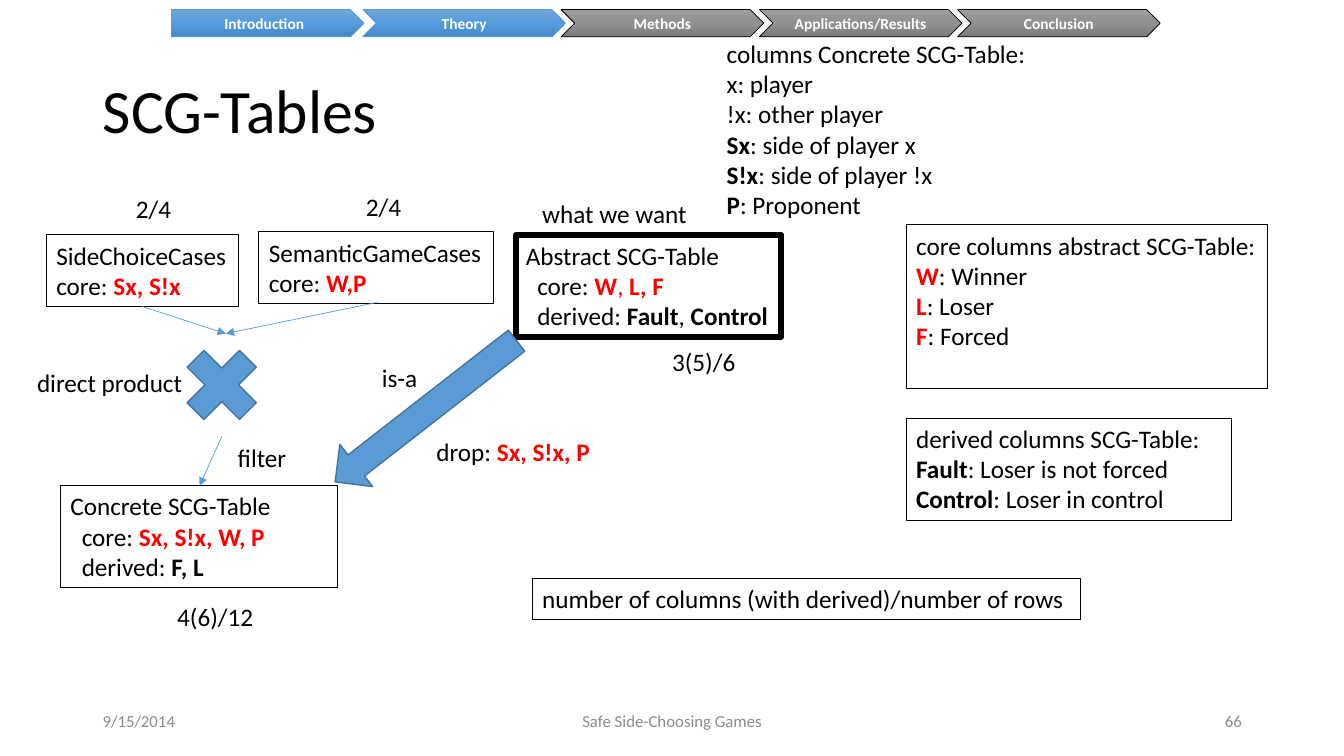
from copy import deepcopy
from dataclasses import dataclass

from lxml import etree
from pptx import Presentation
from pptx.dml.color import RGBColor
from pptx.enum.shapes import MSO_CONNECTOR, MSO_SHAPE
from pptx.enum.text import MSO_ANCHOR, MSO_AUTO_SIZE, PP_ALIGN
from pptx.oxml.ns import qn
from pptx.util import Pt

CHEVRON, PENTAGON = MSO_SHAPE.CHEVRON, MSO_SHAPE.PENTAGON
MULTIPLY, DOWN_ARROW = MSO_SHAPE.MATH_MULTIPLY, MSO_SHAPE.DOWN_ARROW
STRAIGHT = MSO_CONNECTOR.STRAIGHT
LEFT, CENTER, RIGHT = PP_ALIGN.LEFT, PP_ALIGN.CENTER, PP_ALIGN.RIGHT
MIDDLE = MSO_ANCHOR.MIDDLE
FIT_SHAPE = MSO_AUTO_SIZE.SHAPE_TO_FIT_TEXT

BLACK = RGBColor(0, 0, 0)
WHITE = RGBColor(0xFF, 0xFF, 0xFF)
RED = RGBColor(0xFF, 0, 0)
BLUE = RGBColor(0x5B, 0x9B, 0xD5)
DARK_BLUE = RGBColor(0x43, 0x73, 0x9E)
FOOTER_GRAY = RGBColor(0x8C, 0x8C, 0x8C)
BLUE_GRADIENT = (RGBColor(0x71, 0xA6, 0xDB), RGBColor(0x55, 0x9B, 0xDB), RGBColor(0x44, 0x8A, 0xCA))
GRAY_GRADIENT = (RGBColor(0x9D, 0x9D, 0x9D), RGBColor(0x90, 0x90, 0x90), RGBColor(0x7C, 0x7C, 0x7C))

FONT = "Calibri"
INDENT = 8.1


@dataclass(frozen=True)
class Span:
    text: str
    bold: bool = False
    color: RGBColor = BLACK


@dataclass(frozen=True)
class Line:
    spans: tuple
    indent: float = 0


@dataclass(frozen=True)
class Label:
    box: tuple
    lines: tuple
    border: float = 0
    wrap: bool = False


@dataclass(frozen=True)
class Step:
    text: str
    done: bool


@dataclass(frozen=True)
class Footer:
    text: str
    left: float
    width: float
    alignment: PP_ALIGN


def plain(text: str) -> Span:
    return Span(text)


def bold(text: str) -> Span:
    return Span(text, True)


def key(text: str) -> Span:
    return Span(text, True, RED)


def line(*spans: Span, indent: float = 0) -> Line:
    return Line(spans, indent)


LABELS = (
    Label((368.6, 167.8, 189.4, 72.7), (
        line(plain("Abstract SCG-Table")),
        line(plain("core: "), key("W"), Span(",", False, RED), key(" L, F"), indent=INDENT),
        line(plain("derived: "), bold("Fault"), plain(", "), bold("Control"), indent=INDENT),
    ), 4.5),
    Label((647.3, 160.6, 257.8, 116.6), (
        line(plain("core columns abstract SCG-Table:")),
        line(key("W"), plain(": Winner")),
        line(key("L"), plain(": Loser")),
        line(key("F"), plain(": Forced")),
    ), 0.75, True),
    Label((647.3, 298.8, 232.6, 72.7), (
        line(plain("derived columns SCG-Table:")),
        line(bold("Fault"), plain(": Loser is not forced")),
        line(bold("Control"), plain(": Loser in control")),
    ), 0.75, True),
    Label((43.2, 347, 198, 72.7), (
        line(plain("Concrete SCG-Table")),
        line(plain("core: "), key("Sx, S!x, W, P"), indent=INDENT),
        line(plain("derived: "), bold("F, L"), indent=INDENT),
    ), 0.75, True),
    Label((185, 165.6, 167.8, 51), (
        line(plain("SemanticGameCases")), line(plain("core: "), key("W,P")),
    ), 0.75),
    Label((33.1, 167.8, 137.5, 51), (
        line(plain("SideChoiceCases")), line(plain("core: "), key("Sx, S!x")),
    ), 0.75),
    Label((512, 23.8, 230.4, 138.2), (
        line(plain("columns Concrete SCG-Table:")),
        line(plain("x: player")),
        line(plain("!x: other player")),
        line(bold("Sx"), plain(": side of player x")),
        line(bold("S!x"), plain(": side of player !x")),
        line(bold("P"), plain(": Proponent")),
    ), wrap=True),
    Label((19.4, 258.5, 119.5, 29), (line(plain("direct product")),)),
    Label((162.7, 312.5, 49.7, 29), (line(plain("filter")),)),
    Label((265.7, 254.9, 40.3, 29), (line(plain("is-a")),)),
    Label((304.6, 308.2, 125.3, 29), (line(plain("drop: "), key("Sx, S!x, P")),)),
    Label((380.2, 138.2, 118.8, 29), (line(plain("what we want")),)),
    Label((90, 134.6, 40.3, 29), (line(plain("2/4")),)),
    Label((254.2, 133.2, 40.3, 29), (line(plain("2/4")),)),
    Label((119.5, 426.2, 69.8, 29), (line(plain("4(6)/12")),)),
    Label((473, 244.1, 60.5, 29), (line(plain("3(5)/6")),)),
    Label((380.2, 413.3, 391.7, 29),
          (line(plain("number of columns (with derived)/number of rows")),), 0.75),
)
ARROWS = ((101.5, 218.9, 161.3, 238.3), (269.3, 216, 161.3, 238.3), (158.4, 311.8, 142.6, 347))
STEPS = (
    Step("Introduction", True), Step("Theory", True), Step("Methods", False),
    Step("Applications/Results", False), Step("Conclusion", False),
)
FOOTERS = (
    Footer("9/15/2014", 66.2, 216, LEFT),
    Footer("Safe Side-Choosing Games", 318.2, 324, CENTER),
    Footer("66", 678.2, 216, RIGHT),
)


def style_font(font, size: float, color: RGBColor, is_bold: bool = False) -> None:
    font.name, font.size, font.bold = FONT, Pt(size), is_bold
    font.color.rgb = color


def add_label(slide, label: Label) -> None:
    shape = slide.shapes.add_textbox(*map(Pt, label.box))
    frame = shape.text_frame
    frame.word_wrap = label.wrap
    if not label.wrap:
        frame.auto_size = FIT_SHAPE
    if label.border:
        shape.line.color.rgb = BLACK
        shape.line.width = Pt(label.border)
    for index, text_line in enumerate(label.lines):
        paragraph = frame.add_paragraph() if index else frame.paragraphs[0]
        if text_line.indent:
            paragraph._p.get_or_add_pPr().set("marL", str(Pt(text_line.indent)))
        for span in text_line.spans:
            run = paragraph.add_run()
            run.text = span.text
            style_font(run.font, 18, span.color, span.bold)


def add_outlined(slide, kind: MSO_SHAPE, box: tuple, color: RGBColor, width: float):
    shape = slide.shapes.add_shape(kind, *map(Pt, box))
    shape.shadow.inherit = False
    shape.line.color.rgb = color
    shape.line.width = Pt(width)
    return shape


def add_symbol(slide, kind: MSO_SHAPE, box: tuple, rotation: float = 0) -> None:
    shape = add_outlined(slide, kind, box, DARK_BLUE, 1)
    shape.fill.solid()
    shape.fill.fore_color.rgb = BLUE
    shape.rotation = rotation


def add_arrow(slide, ends: tuple) -> None:
    connector = slide.shapes.add_connector(STRAIGHT, *map(Pt, ends))
    connector.line.color.rgb = BLUE
    connector.line.width = Pt(0.5)
    etree.SubElement(connector.line._get_or_add_ln(), qn("a:tailEnd"), type="triangle")
    etree.SubElement(connector._element.spPr, qn("a:effectLst"))


def fill_gradient(shape, colors: tuple) -> None:
    shape.fill.gradient()
    shape.fill.gradient_angle = 270
    stop_list = shape._element.spPr.find(qn("a:gradFill")).find(qn("a:gsLst"))
    stop_list.insert(1, deepcopy(stop_list[0]))
    for index, (stop, color) in enumerate(zip(shape.fill.gradient_stops, colors)):
        stop.color.rgb = color
        stop.position = index / 2


def add_step(slide, index: int, step: Step) -> None:
    kind = CHEVRON if index else PENTAGON
    box = (117.6 + 141.6 * index, 6.9, 144.7, 19.4) if index else (122.4, 6.9, 137.5, 19.4)
    shape = add_outlined(slide, kind, box, BLUE if step.done else BLACK, 0.5)
    fill_gradient(shape, BLUE_GRADIENT if step.done else GRAY_GRADIENT)
    write_line(shape, step.text, 11, WHITE, CENTER, True)


def write_line(shape, text: str, size: float, color: RGBColor, alignment: PP_ALIGN,
               is_bold: bool = False) -> None:
    frame = shape.text_frame
    frame.text = text
    frame.word_wrap = True
    frame.vertical_anchor = MIDDLE
    paragraph = frame.paragraphs[0]
    paragraph.alignment = alignment
    style_font(paragraph.font, size, color, is_bold)


def main() -> None:
    presentation = Presentation()
    presentation.slide_width, presentation.slide_height = Pt(960), Pt(540)
    slide = presentation.slides.add_slide(presentation.slide_layouts[5])
    title = slide.shapes.title
    title.left, title.top, title.width, title.height = map(Pt, (66.2, 28.8, 828, 104.4))
    write_line(title, "SCG-Tables", 44, BLACK, LEFT)
    title.text_frame.paragraphs[0].line_spacing = 0.9
    for label in LABELS:
        add_label(slide, label)
    add_symbol(slide, MULTIPLY, (122.4, 239, 72, 72))
    for ends in ARROWS:
        add_arrow(slide, ends)
    add_symbol(slide, DOWN_ARROW, (285.1, 211.7, 38.2, 164.2), 52.1)
    for index, step in enumerate(STEPS):
        add_step(slide, index, step)
    for footer in FOOTERS:
        shape = slide.shapes.add_textbox(Pt(footer.left), Pt(500.4), Pt(footer.width), Pt(28.8))
        write_line(shape, footer.text, 12, FOOTER_GRAY, footer.alignment)
    presentation.save("out.pptx")


if __name__ == "__main__":
    main()
